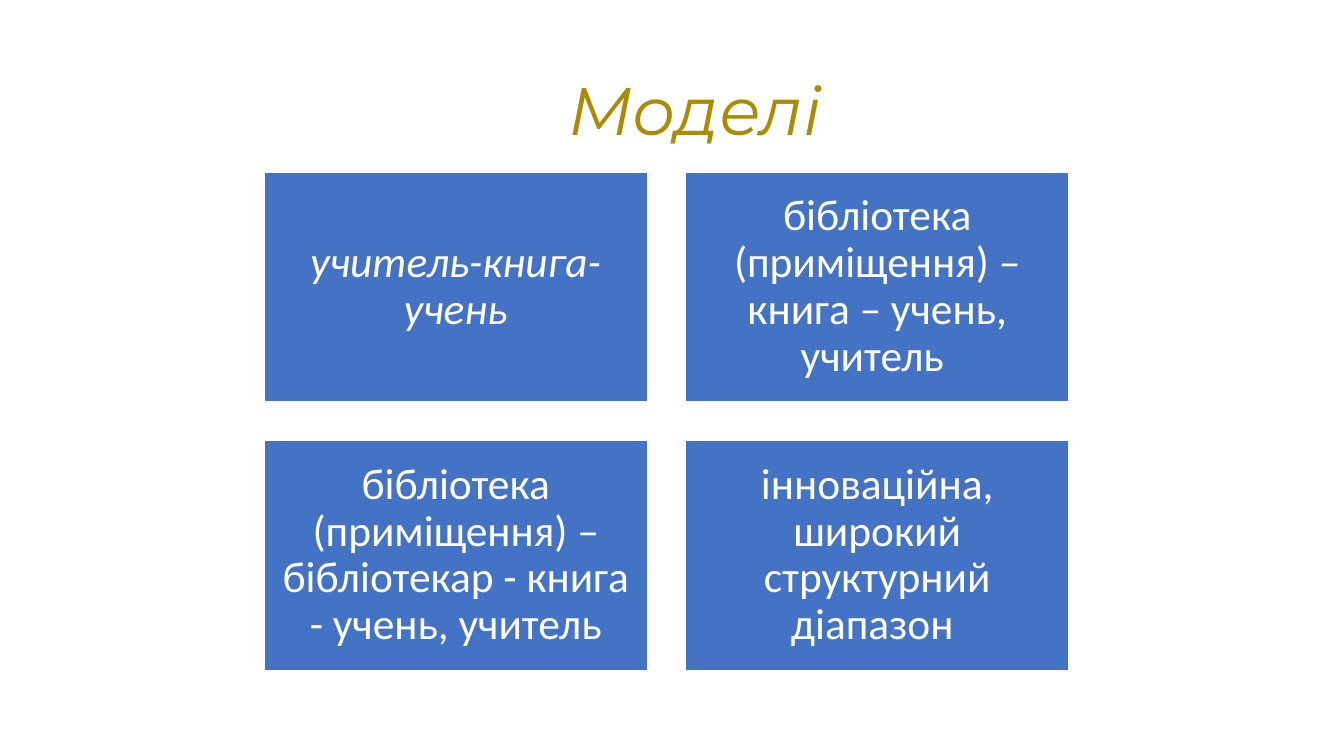
import dataclasses

import pptx
import pptx.dml.color
import pptx.enum.shapes
import pptx.enum.text
import pptx.shapes.autoshape
import pptx.slide
import pptx.util

EMU_PER_PX = 9144  # 100 px to the inch
GOLD = pptx.dml.color.RGBColor(0xAC, 0x8B, 0x00)
BLUE = pptx.dml.color.RGBColor(0x44, 0x72, 0xC4)
WHITE = pptx.dml.color.RGBColor(0xFF, 0xFF, 0xFF)

GRID_LEFT, GRID_TOP = 262, 171
CARD_WIDTH, CARD_HEIGHT = 380, 228
GAP = 38
COLUMNS = 2


@dataclasses.dataclass(frozen=True)
class TextStyle:
    font: str
    size: int
    color: pptx.dml.color.RGBColor
    italic: bool = False


@dataclasses.dataclass(frozen=True)
class Model:
    text: str
    italic: bool = False


MODELS = [
    Model("учитель-книга-учень", italic=True),
    Model("бібліотека (приміщення) – книга – учень, учитель "),
    Model("бібліотека (приміщення) – бібліотекар - книга - учень, учитель"),
    Model("інноваційна, широкий структурний діапазон "),
]


def px(length: int) -> pptx.util.Emu:
    return pptx.util.Emu(length * EMU_PER_PX)


def write_text(shape: pptx.shapes.autoshape.Shape, text: str, style: TextStyle) -> None:
    frame = shape.text_frame
    frame.word_wrap = True
    frame.vertical_anchor = pptx.enum.text.MSO_ANCHOR.MIDDLE
    frame.text = text
    para = frame.paragraphs[0]
    para.alignment = pptx.enum.text.PP_ALIGN.CENTER
    para.line_spacing = 0.9
    font = para.runs[0].font
    font.name = style.font
    font.size = pptx.util.Pt(style.size)
    font.italic = style.italic
    font.color.rgb = style.color


def draw_card(slide: pptx.slide.Slide, model: Model, left: int, top: int) -> None:
    card = slide.shapes.add_shape(
        pptx.enum.shapes.MSO_SHAPE.RECTANGLE,
        px(left), px(top), px(CARD_WIDTH), px(CARD_HEIGHT),
    )
    card.shadow.inherit = False
    card.fill.solid()
    card.fill.fore_color.rgb = BLUE
    card.line.color.rgb = WHITE
    card.line.width = pptx.util.Pt(1)
    frame = card.text_frame
    frame.margin_left = frame.margin_right = px(13)
    frame.margin_top = frame.margin_bottom = px(13)
    write_text(card, model.text, TextStyle("Calibri", 31, WHITE, model.italic))


def main() -> None:
    deck = pptx.Presentation()
    deck.slide_width = px(1333)
    deck.slide_height = px(750)
    slide = deck.slides.add_slide(deck.slide_layouts[6])

    # Title
    title = slide.shapes.add_textbox(px(123), px(40), px(1150), px(145))
    write_text(title, "Моделі ", TextStyle("Montserrat", 48, GOLD, italic=True))

    # Grid of models
    for index, model in enumerate(MODELS):
        row, column = divmod(index, COLUMNS)
        draw_card(
            slide,
            model,
            GRID_LEFT + column * (CARD_WIDTH + GAP),
            GRID_TOP + row * (CARD_HEIGHT + GAP),
        )

    deck.save("out.pptx")


if __name__ == "__main__":
    main()
